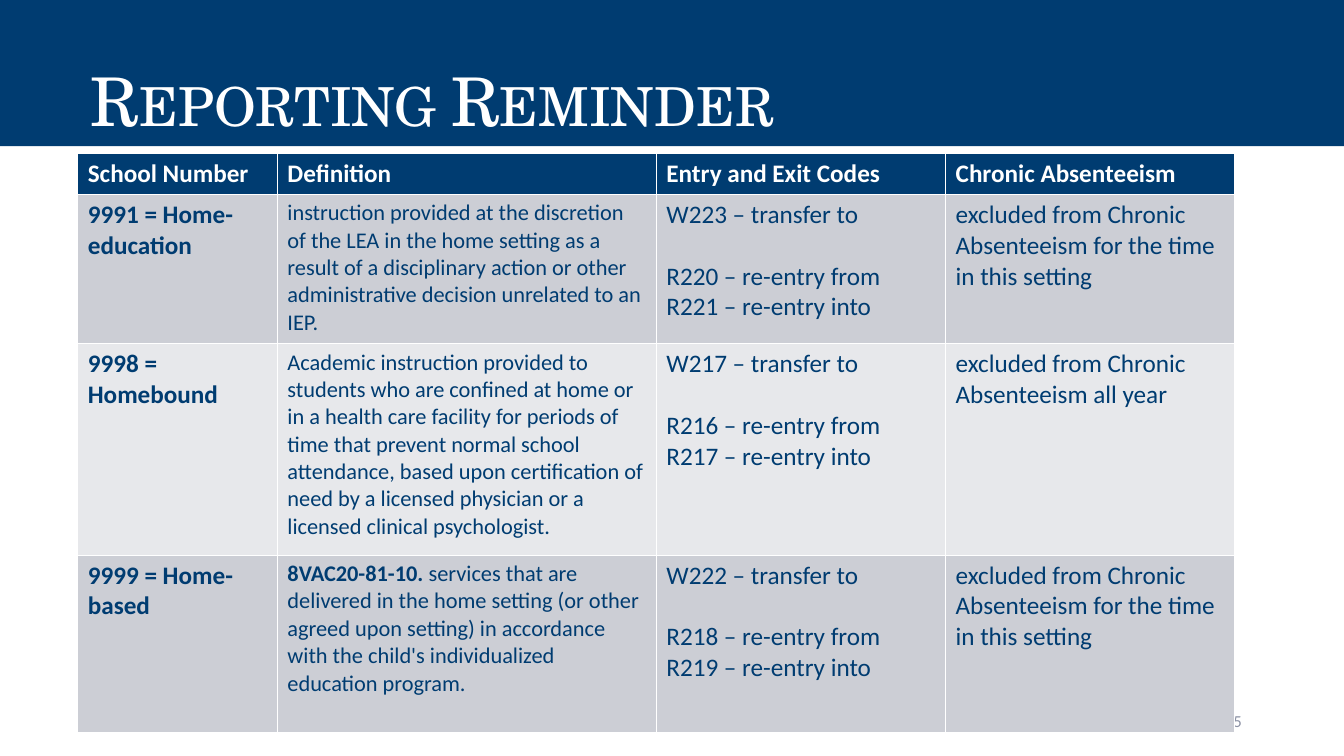
"""Build the Reporting Reminder slide: a title band over a table of school number codes."""
from dataclasses import dataclass

from pptx import Presentation
from pptx import util as u
from pptx.dml.color import RGBColor
from pptx.enum import text


@dataclass(frozen=True)
class Theme:
    navy: RGBColor = RGBColor(0x00, 0x3C, 0x71)
    white: RGBColor = RGBColor(0xFF, 0xFF, 0xFF)
    muted: RGBColor = RGBColor(0x8C, 0x92, 0xA5)
    bands: tuple = (RGBColor(0xCC, 0xCE, 0xD5), RGBColor(0xE7, 0xE8, 0xEB))
    heading_font: str = "TeX Gyre Schola"
    body_font: str = "Calibri"
    heading: int = 48
    body: int = 18
    definition: int = 16
    number: int = 12


theme = Theme()


def style(paragraph, size, color, name=theme.body_font, bold=False):
    font = paragraph.font
    font.name, font.size, font.bold = name, u.Pt(size), bold
    font.color.rgb = color


def fill_cell(cell, color):
    cell.fill.solid()
    cell.fill.fore_color.rgb = color


headers = ["School Number", "Definition", "Entry and Exit Codes", "Chronic Absenteeism"]
settings = [
    ("9991 = Home-education", "",
     "instruction provided at the discretion of the LEA in the home setting as a result of "
     "a disciplinary action or other administrative decision unrelated to an IEP.",
     ("W223", "R220", "R221"),
     "excluded from Chronic Absenteeism for the time in this setting"),
    ("9998 = Homebound", "",
     "Academic instruction provided to students who are confined at home or in a health care "
     "facility for periods of time that prevent normal school attendance, based upon "
     "certification of need by a licensed physician or a licensed clinical psychologist.",
     ("W217", "R216", "R217"),
     "excluded from Chronic Absenteeism all year"),
    ("9999 = Home-based", "8VAC20-81-10. ",
     "services that are delivered in the home setting (or other agreed upon setting) in "
     "accordance with the child's individualized education program.",
     ("W222", "R218", "R219"),
     "excluded from Chronic Absenteeism for the time in this setting"),
]
code_meanings = ("transfer to", "re-entry from", "re-entry into")
column_widths = [5.03, 9.55, 7.29, 7.29]
row_heights = [1.04, 3.76, 5.33, 4.47]

deck = Presentation()
deck.slide_width, deck.slide_height = u.Cm(33.87), u.Cm(19.05)
slide = deck.slides.add_slide(deck.slide_layouts[5])

title = slide.shapes.title
title.left, title.top, title.width, title.height = 0, 0, deck.slide_width, u.Cm(3.68)
title.fill.solid()
title.fill.fore_color.rgb = theme.navy
title.text = "Reporting Reminder"
title_frame = title.text_frame
title_frame.auto_size = text.MSO_AUTO_SIZE.NONE
title_frame.vertical_anchor = text.MSO_ANCHOR.BOTTOM
title_frame.margin_left = u.Cm(2.29)
heading = title_frame.paragraphs[0]
heading.alignment = text.PP_ALIGN.LEFT
heading.line_spacing = 0.9
style(heading, theme.heading, theme.white, theme.heading_font)
heading.runs[0].font._element.set("cap", "small")

page_number = slide.shapes.add_textbox(u.Cm(23.93), u.Cm(17.65), u.Cm(7.62), u.Cm(1.02))
number_frame = page_number.text_frame
number_frame.word_wrap = True
number_frame.vertical_anchor = text.MSO_ANCHOR.MIDDLE
number_frame.text = "15"
number_frame.paragraphs[0].alignment = text.PP_ALIGN.RIGHT
style(number_frame.paragraphs[0], theme.number, theme.muted)

codes_table = slide.shapes.add_table(
    len(row_heights), len(column_widths), u.Cm(1.96), u.Cm(3.86),
    u.Cm(sum(column_widths)), u.Cm(sum(row_heights))).table
for column, width in zip(codes_table.columns, column_widths):
    column.width = u.Cm(width)
for row, height in zip(codes_table.rows, row_heights):
    row.height = u.Cm(height)

for cell, header in zip(codes_table.rows[0].cells, headers):
    cell.text = header
    fill_cell(cell, theme.navy)
    style(cell.text_frame.paragraphs[0], theme.body, theme.white, bold=True)

for index, (school, citation, definition, codes, absenteeism) in enumerate(settings):
    cells = codes_table.rows[index + 1].cells
    code_lines = [f"{code} – {meaning}" for code, meaning in zip(codes, code_meanings)]
    contents = [school, citation, "\n".join(code_lines), absenteeism]
    for column, (cell, content) in enumerate(zip(cells, contents)):
        cell.text = content
        fill_cell(cell, theme.bands[index % 2])
        size = theme.definition if column == 1 else theme.body
        for paragraph in cell.text_frame.paragraphs:
            style(paragraph, size, theme.navy, bold=column == 0)
    definition_line = cells[1].text_frame.paragraphs[0]
    for citation_run in definition_line.runs:
        citation_run.font.bold = True
    definition_line.add_run().text = definition
    cells[2].text_frame.paragraphs[1].space_before = u.Pt(22)

deck.save("out.pptx")
